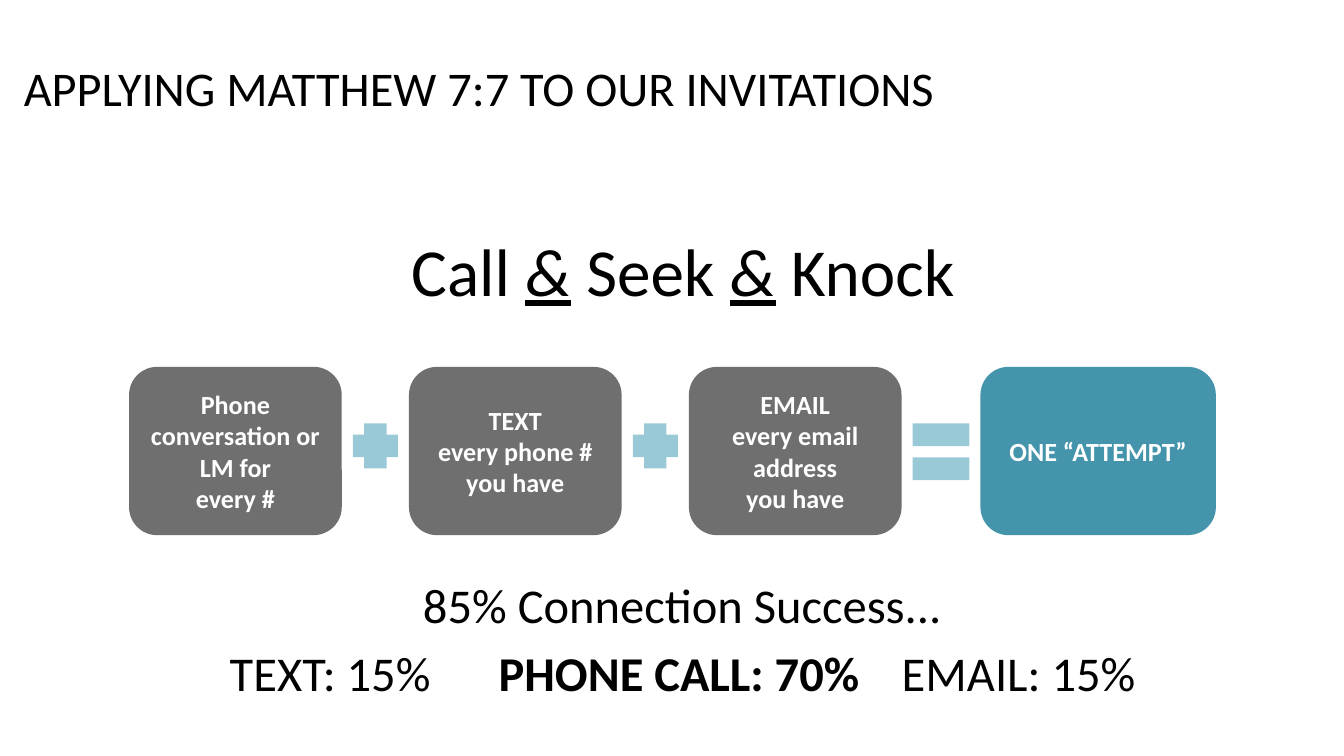
from lxml.etree import SubElement
from pptx import Presentation
from pptx.dml.color import RGBColor
from pptx.enum.shapes import MSO_SHAPE
from pptx.enum.text import MSO_ANCHOR, PP_ALIGN
from pptx.oxml.ns import qn
from pptx.util import Cm, Pt

THEME = {
    "font": "Calibri", "ink": "000000", "light": "FFFFFF",
    "step": "6F6F6F", "result": "4494AC", "operator": "99C9D7",
    "title": 25.9, "headline": 36, "summary": 26, "label": 14,
}

# Each paragraph is a list of (text, font formats) spans.
AMPERSAND = ("&", {"italic": True, "underline": True})
TITLE = [[("APPLYING MATTHEW 7:7 TO OUR INVITATIONS", {})]]
HEADLINE = [[("Call ", {}), AMPERSAND, (" Seek ", {}), AMPERSAND, (" Knock", {})]]
SUMMARY = [
    [("85% Connection Success...", {})],
    [("TEXT: 15%\t", {}), ("PHONE CALL: 70%", {"bold": True}), ("\tEMAIL: 15%", {})],
]
SUMMARY_TABS = (5.08, 12.7)
FLOW = [
    ("step", ["Phone conversation or LM for", "every #"]),
    ("plus", None),
    ("step", ["TEXT", "every phone # you have"]),
    ("plus", None),
    ("step", ["EMAIL", "every email address", "you have"]),
    ("equals", None),
    ("result", ["ONE “ATTEMPT”"]),
]

# Flow measures in centimetres
FLOW_LEFT, FLOW_TOP, FLOW_HEIGHT, FLOW_GAP = 2.44, 6.93, 3.18, 0.21
WIDTHS = {"step": 4.02, "plus": 0.85, "equals": 1.07, "result": 4.45}
OPERATOR_TOP, BAR_HEIGHT, BAR_PITCH = 8.0, 0.43, 0.64


def write(frame, paragraphs, size, color="ink", align=PP_ALIGN.CENTER,
          space=0, tabs=(), **formats):
    frame.word_wrap = True
    for index, spans in enumerate(paragraphs):
        para = frame.add_paragraph() if index else frame.paragraphs[0]
        para.alignment = align
        if index:
            para.space_before = Pt(space)
        if any("\t" in text for text, _ in spans):
            tab_list = SubElement(para._p.get_or_add_pPr(), qn("a:tabLst"))
            for stop in tabs:
                SubElement(tab_list, qn("a:tab"), pos=str(Cm(stop)), algn="l")
        for text, extra in spans:
            span = para.add_run()
            span.text = text
            span.font.color.rgb = RGBColor.from_string(THEME[color])
            values = {"name": THEME["font"], "size": Pt(THEME[size]), **formats, **extra}
            for name, value in values.items():
                setattr(span.font, name, value)


def add_text(page, place, paragraphs, size, anchor=MSO_ANCHOR.TOP, **options):
    box = page.shapes.add_textbox(*map(Cm, place))
    box.text_frame.vertical_anchor = anchor
    write(box.text_frame, paragraphs, size, **options)


def add_block(page, preset, place, color):
    block = page.shapes.add_shape(preset, *map(Cm, place))
    block.shadow.inherit = False
    block.fill.solid()
    block.fill.fore_color.rgb = RGBColor.from_string(THEME[color])
    block.line.fill.background()
    return block


def add_card(page, place, color, lines):
    frame = add_block(page, MSO_SHAPE.ROUNDED_RECTANGLE, place, color).text_frame
    frame.vertical_anchor = MSO_ANCHOR.MIDDLE
    frame.margin_left = frame.margin_right = Cm(0.13)
    write(frame, [[(line, {})] for line in lines], "label", "light", bold=True)


def add_flow(page):
    left = FLOW_LEFT
    for kind, lines in FLOW:
        width = WIDTHS[kind]
        if kind == "plus":
            add_block(page, MSO_SHAPE.CROSS, (left, OPERATOR_TOP, width, width), "operator")
        elif kind == "equals":
            for bar in range(2):
                top = OPERATOR_TOP + bar * BAR_PITCH
                add_block(page, MSO_SHAPE.RECTANGLE, (left, top, width, BAR_HEIGHT), "operator")
        else:
            add_card(page, (left, FLOW_TOP, width, FLOW_HEIGHT), kind, lines)
        left += width + FLOW_GAP


def main():
    deck = Presentation()
    deck.slide_width, deck.slide_height = Cm(25.4), Cm(14.28)
    page = deck.slides.add_slide(deck.slide_layouts[6])
    add_text(page, (0.2, 0.91, 18.85, 1.47), TITLE, "title",
             MSO_ANCHOR.MIDDLE, align=PP_ALIGN.LEFT)
    add_text(page, (2.11, 4.2, 21.59, 6.15), HEADLINE, "headline")
    add_flow(page)
    add_text(page, (2.11, 10.74, 21.59, 3.38), SUMMARY, "summary",
             space=5, tabs=SUMMARY_TABS)
    deck.save("out.pptx")


if __name__ == "__main__":
    main()
